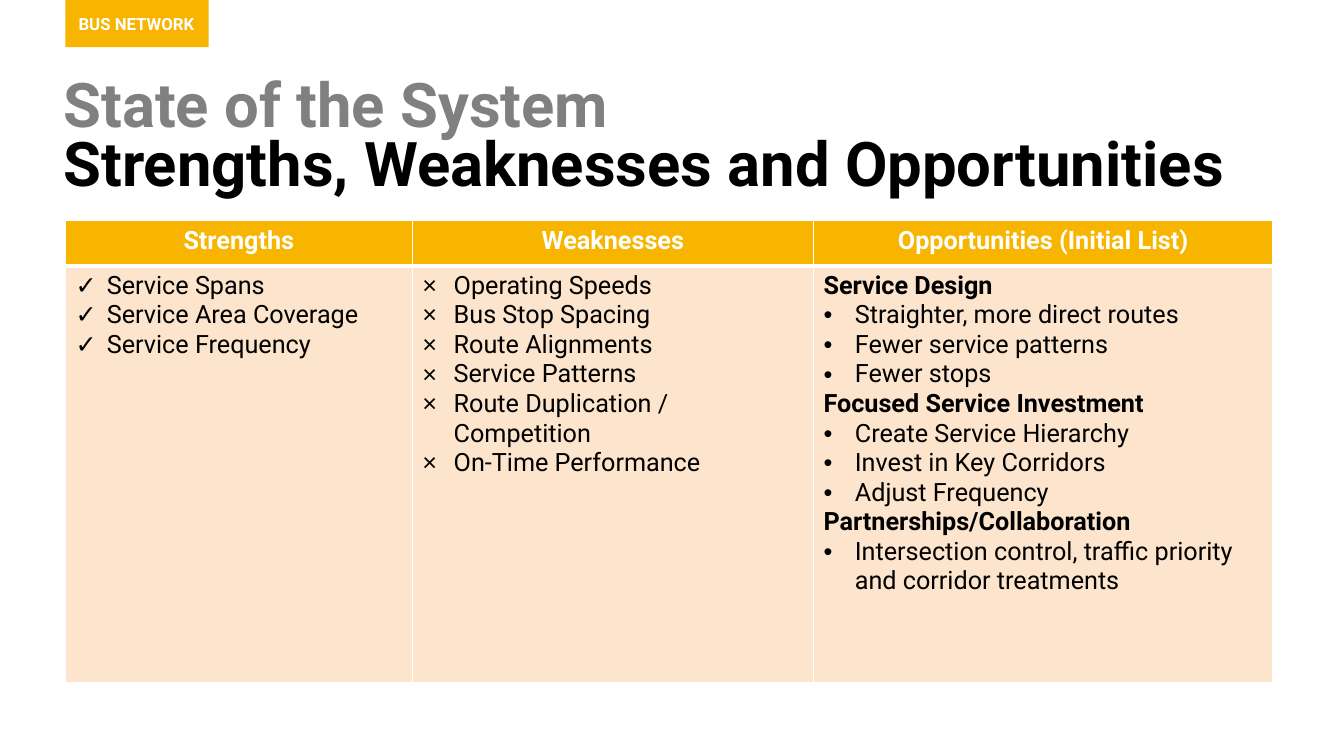
from lxml.etree import SubElement
from pptx import Presentation
from pptx.dml.color import RGBColor
from pptx.enum.shapes import MSO_SHAPE as Shape
from pptx.enum.text import MSO_ANCHOR as Anchor, PP_ALIGN as Align
from pptx.oxml.ns import qn
from pptx.util import Cm, Pt

GOLD = RGBColor(0xF7, 0xB5, 0x00)
CREAM = RGBColor(0xFC, 0xE5, 0xCC)
GRAY = RGBColor(0x80, 0x80, 0x80)
BLACK = RGBColor(0, 0, 0)
WHITE = RGBColor(0xFF, 0xFF, 0xFF)
FONT = "Roboto"

COLS = [8.74, 10.11, 11.58]
ROWS = [1.14, 10.5]
HEADS = ["Strengths", "Weaknesses", "Opportunities (Initial List)"]
# Each column is a list of (heading, bullet, items) groups.
LISTS = [
    [("", "✓", ["Service Spans", "Service Area Coverage", "Service Frequency"])],
    [("", "×", ["Operating Speeds", "Bus Stop Spacing", "Route Alignments",
                "Service Patterns", "Route Duplication / Competition",
                "On-Time Performance"])],
    [("Service Design", "•", ["Straighter, more direct routes",
                              "Fewer service patterns", "Fewer stops"]),
     ("Focused Service Investment", "•", ["Create Service Hierarchy",
                                          "Invest in Key Corridors",
                                          "Adjust Frequency"]),
     ("Partnerships/Collaboration", "•",
      ["Intersection control, traffic priority and corridor treatments"])],
]


def style(run, size, color, bold):
    font = run.font
    font.name, font.size, font.bold = FONT, Pt(size), bold
    font.color.rgb = color


def inset(frame):
    frame.margin_left = frame.margin_right = Cm(0.33)
    frame.margin_top = frame.margin_bottom = Cm(0.33)


def add_tag(slide, left, top, width, height):
    tag = slide.shapes.add_shape(Shape.RECTANGLE, Cm(left), Cm(top),
                                 Cm(width), Cm(height))
    tag.shadow.inherit = False
    tag.fill.solid()
    tag.fill.fore_color.rgb = GOLD
    tag.line.fill.background()
    frame = tag.text_frame
    inset(frame)
    frame.word_wrap = False
    frame.vertical_anchor = Anchor.MIDDLE
    frame.text = "BUS NETWORK"
    para = frame.paragraphs[0]
    para.alignment = Align.LEFT
    style(para.runs[0], 12, WHITE, True)


def add_title(slide, left, top, width, height):
    box = slide.shapes.add_textbox(Cm(left), Cm(top), Cm(width), Cm(height))
    frame = box.text_frame
    inset(frame)
    frame.word_wrap = True
    frame.vertical_anchor = Anchor.MIDDLE
    para = frame.paragraphs[0]
    para.text = "State of the System\nStrengths, Weaknesses and Opportunities"
    para.line_spacing = 0.8
    for run, color in zip(para.runs, [GRAY, BLACK]):
        style(run, 44, color, True)


def paint(cell, color, top, bottom):
    """Fill a cell and give it white borders, with top and bottom in points."""
    props = cell._tc.get_or_add_tcPr()
    for side, width in [("L", 1), ("R", 1), ("T", top), ("B", bottom)]:
        line = SubElement(props, qn(f"a:ln{side}"), w=str(Pt(width)))
        fill = SubElement(line, qn("a:solidFill"))
        SubElement(fill, qn("a:srgbClr"), val=str(WHITE))
    cell.fill.solid()
    cell.fill.fore_color.rgb = color


def set_bullet(para, mark):
    props = para._p.get_or_add_pPr()
    props.set("marL", str(Cm(0.79)))
    props.set("indent", str(-Cm(0.79)))
    SubElement(props, qn("a:buFont"), typeface="Arial")
    SubElement(props, qn("a:buChar"), char=mark)


def fill_list(cell, groups):
    lines = []
    for head, mark, items in groups:
        if head:
            lines.append((head, ""))
        lines += [(item, mark) for item in items]
    frame = cell.text_frame
    frame.text = "\n".join(text for text, _ in lines)
    for para, (_, mark) in zip(frame.paragraphs, lines):
        style(para.runs[0], 18, BLACK, not mark)
        if mark:
            set_bullet(para, mark)


def add_grid(slide, left, top):
    table = slide.shapes.add_table(len(ROWS), len(COLS), Cm(left), Cm(top),
                                   Cm(sum(COLS)), Cm(sum(ROWS))).table
    for row, height in zip(table.rows, ROWS):
        row.height = Cm(height)
    for i, (width, head, groups) in enumerate(zip(COLS, HEADS, LISTS)):
        table.columns[i].width = Cm(width)
        cell = table.cell(0, i)
        paint(cell, GOLD, 1, 3)
        cell.text_frame.text = head
        para = cell.text_frame.paragraphs[0]
        para.alignment = Align.CENTER
        style(para.runs[0], 18, WHITE, True)
        body = table.cell(1, i)
        paint(body, CREAM, 3, 1)
        fill_list(body, groups)


def main():
    deck = Presentation()
    deck.slide_width, deck.slide_height = Cm(33.87), Cm(19.05)
    slide = deck.slides.add_slide(deck.slide_layouts[6])
    add_title(slide, 1.27, 1.65, 31.32, 3.71)
    add_tag(slide, 1.65, 0, 3.61, 1.19)
    add_grid(slide, 1.65, 5.56)
    deck.save("out.pptx")


if __name__ == "__main__":
    main()
